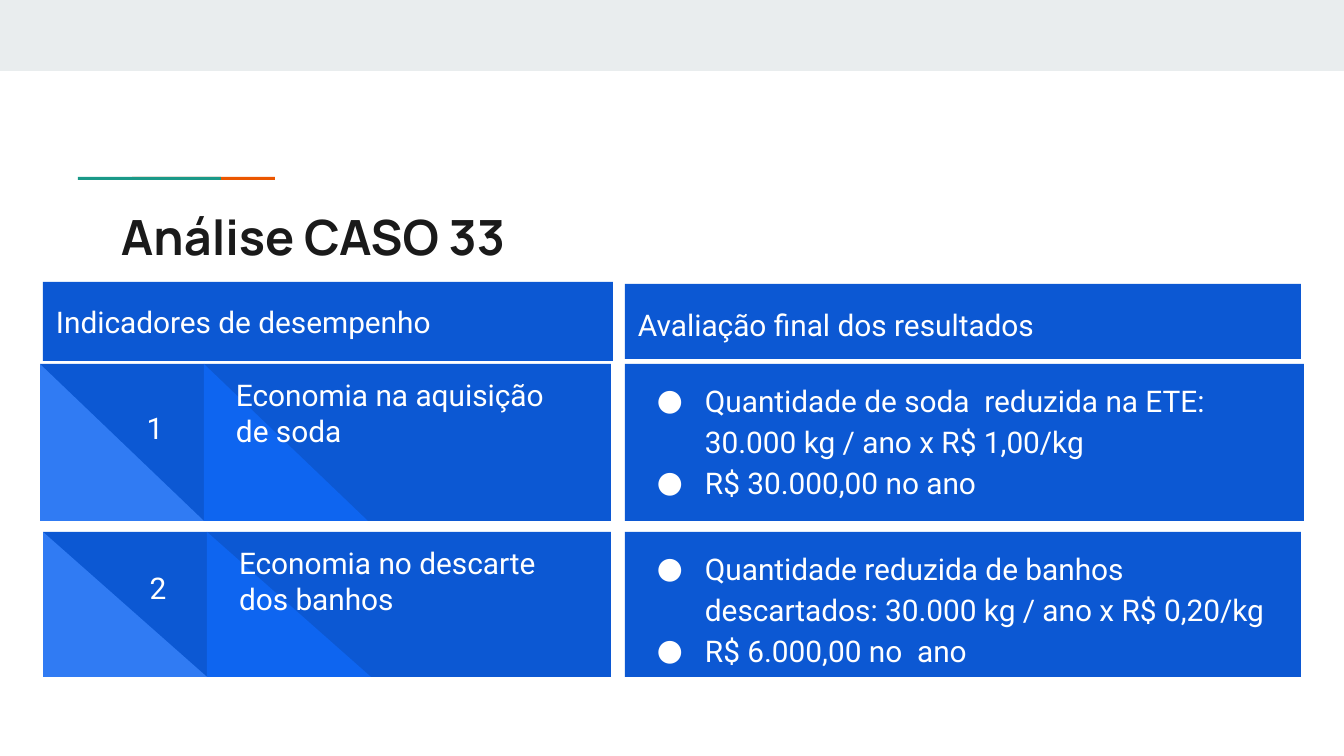
from lxml.etree import SubElement
from pptx import Presentation
from pptx.dml.color import RGBColor
from pptx.enum.shapes import MSO_SHAPE
from pptx.enum.text import MSO_ANCHOR, PP_ALIGN
from pptx.oxml.ns import qn
from pptx.util import Pt

TITLE = "Análise CASO 33"
HEADERS = [
    ("Indicadores de desempenho", (43, 282, 570, 79), 1.0),
    ("Avaliação final dos resultados", (625, 284, 676, 75), 1.15),
]
# Each row: left, top, height, number height, result width
ROWS = [
    {
        "place": (40, 364, 157, 95, 679),
        "number": "1",
        "indicator": "Economia na aquisição de soda",
        "results": [
            "Quantidade de soda  reduzida na ETE: 30.000 kg / ano x R$ 1,00/kg",
            "R$ 30.000,00 no ano",
        ],
    },
    {
        "place": (43, 532, 145, 87, 676),
        "number": "2",
        "indicator": "Economia no descarte dos banhos",
        "results": [
            "Quantidade reduzida de banhos descartados: 30.000 kg / ano x R$ 0,20/kg",
            "R$ 6.000,00 no  ano",
        ],
    },
]
ACCENTS = [("EB5600", 132), ("1A9988", 78)]

BLUE, BRIGHT, LIGHT, WHITE = "0C58D3", "0E65F0", "307BF3", "FFFFFF"
ROW_RIGHT = 611
RESULT_LEFT = 625
TRIANGLE_WIDTH = 164
INSET = 13
BULLET_INDENT, BULLET_HANG = 67, 48


def px(length):
    return round(length * 914400 / 134.4)


def color(value):
    return RGBColor.from_string(value)


def add_block(page, place, fill, kind=MSO_SHAPE.RECTANGLE):
    shape = page.shapes.add_shape(kind, *map(px, place))
    shape.shadow.inherit = False
    shape.fill.solid()
    shape.fill.fore_color.rgb = color(fill)
    shape.line.fill.background()
    return shape


def add_bullet(paragraph):
    properties = paragraph._p.get_or_add_pPr()
    properties.set("marL", str(px(BULLET_INDENT)))
    properties.set("indent", str(-px(BULLET_HANG)))
    bullet_color = SubElement(properties, qn("a:buClr"))
    SubElement(bullet_color, qn("a:srgbClr"), val=WHITE)
    SubElement(properties, qn("a:buFont"), typeface="Roboto")
    SubElement(properties, qn("a:buChar"), char="●")


def write(box, lines, anchor=MSO_ANCHOR.TOP, align=PP_ALIGN.LEFT, spacing=1.0,
          bullets=False, font="Roboto", size=16, ink=WHITE, bold=False):
    frame = box.text_frame
    frame.word_wrap = True
    frame.vertical_anchor = anchor
    frame.margin_left = frame.margin_right = px(INSET)
    frame.margin_top = frame.margin_bottom = px(INSET)
    for index, line in enumerate(lines):
        paragraph = frame.add_paragraph() if index else frame.paragraphs[0]
        if bullets:
            add_bullet(paragraph)
        paragraph.alignment = align
        paragraph.line_spacing = spacing
        span = paragraph.add_run()
        span.text = line
        span.font.name = font
        span.font.size = Pt(size)
        span.font.bold = bold
        span.font.color.rgb = color(ink)


def add_text(page, place, text, **style):
    write(page.shapes.add_textbox(*map(px, place)), [text], **style)


def add_row(page, row):
    left, top, height, number_height, result_width = row["place"]
    middle = left + TRIANGLE_WIDTH
    add_block(page, (left, top, ROW_RIGHT - left, height), BLUE)
    for start, fill in ((middle, BRIGHT), (left, LIGHT)):
        add_block(page, (start, top, TRIANGLE_WIDTH, height), fill,
                  MSO_SHAPE.RIGHT_TRIANGLE)
    add_text(page, (left + 64, top, 102, number_height), row["number"],
             anchor=MSO_ANCHOR.BOTTOM, align=PP_ALIGN.CENTER)
    add_text(page, (left + 183, top, 357, height), row["indicator"])
    result = add_block(page, (RESULT_LEFT, top, result_width, height), BLUE)
    write(result, row["results"], spacing=1.15, bullets=True)


def main():
    deck = Presentation()
    deck.slide_width, deck.slide_height = px(1344), px(756)
    page = deck.slides.add_slide(deck.slide_layouts[6])

    add_block(page, (0, 0, 1344, 71), "E9EDEE")
    for fill, left in ACCENTS:
        add_block(page, (left, 177, 143, 3), fill)
    add_text(page, (108, 194, 1130, 79), TITLE,
             font="Manrope", size=26, ink="1A1A1A", bold=True)
    for text, place, spacing in HEADERS:
        write(add_block(page, place, BLUE), [text],
              anchor=MSO_ANCHOR.MIDDLE, spacing=spacing)
    for row in ROWS:
        add_row(page, row)

    deck.save("out.pptx")


if __name__ == "__main__":
    main()
